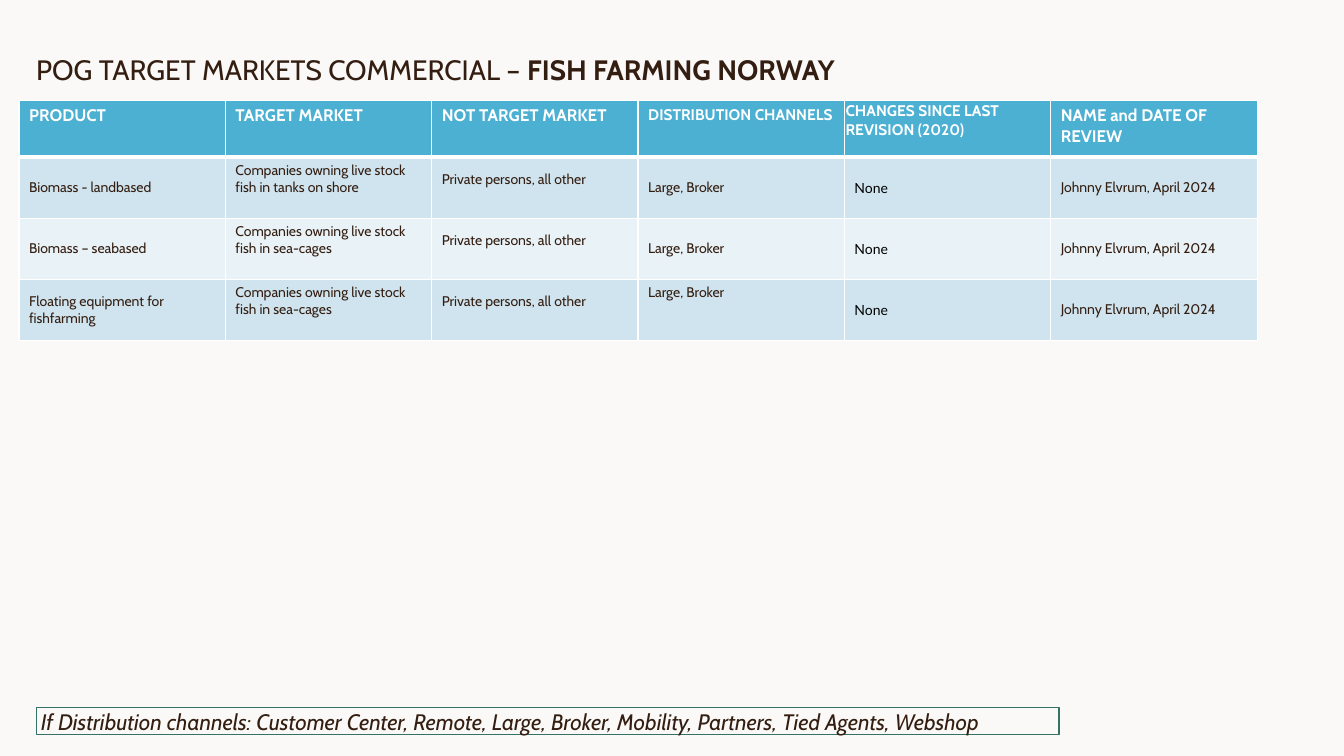
from dataclasses import dataclass

import pptx
import pptx.dml.color
import pptx.enum.shapes
import pptx.enum.text
import pptx.oxml
import pptx.oxml.ns
import pptx.util

Cm = pptx.util.Cm
Pt = pptx.util.Pt
RGBColor = pptx.dml.color.RGBColor
Anchor = pptx.enum.text.MSO_ANCHOR
Align = pptx.enum.text.PP_ALIGN

PAPER = RGBColor(0xFA, 0xF9, 0xF7)
BROWN = RGBColor(0x33, 0x1E, 0x11)
BLACK = RGBColor(0x00, 0x00, 0x00)
WHITE = RGBColor(0xFF, 0xFF, 0xFF)
GREEN = RGBColor(0x35, 0x72, 0x66)
HEADER_BLUE = RGBColor(0x4C, 0xB0, 0xD3)
BAND_DARK = RGBColor(0xD0, 0xE4, 0xEF)
BAND_LIGHT = RGBColor(0xE9, 0xF2, 0xF7)

COLUMN_WIDTH = Cm(5.2)
HEADER_HEIGHT = Cm(1.43)
ROW_HEIGHT = Cm(1.54)


@dataclass(frozen=True)
class Column:
    heading: str
    size: float = 12
    tight: bool = False
    font: str = "Cabin"
    color: RGBColor = BROWN
    anchor: Anchor = Anchor.MIDDLE
    bottom: float = 0.13


@dataclass(frozen=True)
class Product:
    name: str
    target: str
    channel_anchor: Anchor = Anchor.MIDDLE

    def values(self) -> list[str]:
        return [self.name, self.target, "Private persons, all other",
                "Large, Broker", "None", "Johnny Elvrum, April 2024"]


COLUMNS = [
    Column("PRODUCT"),
    Column("TARGET MARKET", anchor=Anchor.TOP),
    Column("NOT TARGET MARKET", bottom=0.55),
    Column("DISTRIBUTION CHANNELS", size=11),
    Column("CHANGES SINCE LAST REVISION (2020)", size=11, tight=True,
           font="Lato", color=BLACK),
    Column("NAME and DATE OF REVIEW"),
]
CHANNEL_COLUMN = 3

PRODUCTS = [
    Product("Biomass - landbased", "Companies owning live stock fish in tanks on shore"),
    Product("Biomass – seabased", "Companies owning live stock fish in sea-cages"),
    Product("Floating equipment for fishfarming",
            "Companies owning live stock fish in sea-cages", Anchor.TOP),
]


def write(paragraph, text: str, *, size: float, color: RGBColor = BROWN,
          font: str = "Cabin", bold: bool = False, italic: bool = False) -> None:
    run = paragraph.add_run()
    run.text = text
    run.font.size = Pt(size)
    run.font.name = font
    run.font.color.rgb = color
    run.font.bold = bold
    run.font.italic = italic
    paragraph.alignment = Align.LEFT


def set_insets(frame, left: float, top: float, right: float, bottom: float) -> None:
    frame.margin_left, frame.margin_top = Cm(left), Cm(top)
    frame.margin_right, frame.margin_bottom = Cm(right), Cm(bottom)


def style_cell(cell, fill: RGBColor, top: float, bottom: float) -> None:
    properties = cell._tc.get_or_add_tcPr()
    for side, width in (("L", 1), ("R", 1), ("T", top), ("B", bottom)):
        properties.append(pptx.oxml.parse_xml(
            f'<a:ln{side} {pptx.oxml.ns.nsdecls("a")} w="{Pt(width)}">'
            f'<a:solidFill><a:srgbClr val="{WHITE}"/></a:solidFill></a:ln{side}>'))
    cell.fill.solid()
    cell.fill.fore_color.rgb = fill


def add_title(slide) -> None:
    title = slide.shapes.title
    title.left, title.top = Cm(0.91), Cm(0.89)
    title.width, title.height = Cm(31.47), Cm(2.59)
    frame = title.text_frame
    frame.auto_size = pptx.enum.text.MSO_AUTO_SIZE.NONE
    frame.vertical_anchor = Anchor.TOP
    set_insets(frame, 0, 0, 0, 0)
    heading = frame.paragraphs[0]
    heading.line_spacing = Pt(36)
    write(heading, "POG TARGET MARKETS COMMERCIAL – ", size=20)
    write(heading, "FISH FARMING NORWAY", size=20, bold=True)


def add_market_table(slide) -> None:
    markets = slide.shapes.add_table(
        len(PRODUCTS) + 1, len(COLUMNS), Cm(0.48), Cm(2.53),
        COLUMN_WIDTH * len(COLUMNS), HEADER_HEIGHT + ROW_HEIGHT * len(PRODUCTS)).table
    markets.rows[0].height = HEADER_HEIGHT
    for index, column in enumerate(COLUMNS):
        markets.columns[index].width = COLUMN_WIDTH
        cell = markets.cell(0, index)
        style_cell(cell, HEADER_BLUE, 1, 3)
        if column.tight:
            set_insets(cell, 0.03, 0.03, 0.03, 0)
        write(cell.text_frame.paragraphs[0], column.heading,
              size=column.size, color=WHITE, bold=True)

    for row, product in enumerate(PRODUCTS, start=1):
        markets.rows[row].height = ROW_HEIGHT
        for index, (column, value) in enumerate(zip(COLUMNS, product.values())):
            cell = markets.cell(row, index)
            style_cell(cell, BAND_DARK if row % 2 else BAND_LIGHT, 3 if row == 1 else 1, 1)
            cell.vertical_anchor = (
                product.channel_anchor if index == CHANNEL_COLUMN else column.anchor)
            cell.margin_bottom = Cm(column.bottom)
            write(cell.text_frame.paragraphs[0], value,
                  size=10, font=column.font, color=column.color)


def add_channel_note(slide) -> None:
    channels = slide.shapes.add_shape(
        pptx.enum.shapes.MSO_SHAPE.RECTANGLE, Cm(0.91), Cm(17.83), Cm(25.78), Cm(0.69))
    channels.shadow.inherit = False
    channels.fill.background()
    channels.line.color.rgb = GREEN
    channels.line.width = Pt(0.75)
    frame = channels.text_frame
    frame.word_wrap = True
    frame.vertical_anchor = Anchor.MIDDLE
    set_insets(frame, 0.12, 0, 0, 0)
    write(frame.paragraphs[0],
          "If Distribution channels: Customer Center, Remote, Large, Broker, "
          "Mobility, Partners, Tied Agents, Webshop", size=16, italic=True)


def main() -> None:
    presentation = pptx.Presentation()
    presentation.slide_width, presentation.slide_height = Cm(33.87), Cm(19.05)
    slide = presentation.slides.add_slide(presentation.slide_layouts[5])
    slide.background.fill.solid()
    slide.background.fill.fore_color.rgb = PAPER
    add_title(slide)
    add_market_table(slide)
    add_channel_note(slide)
    presentation.save("out.pptx")


if __name__ == "__main__":
    main()
